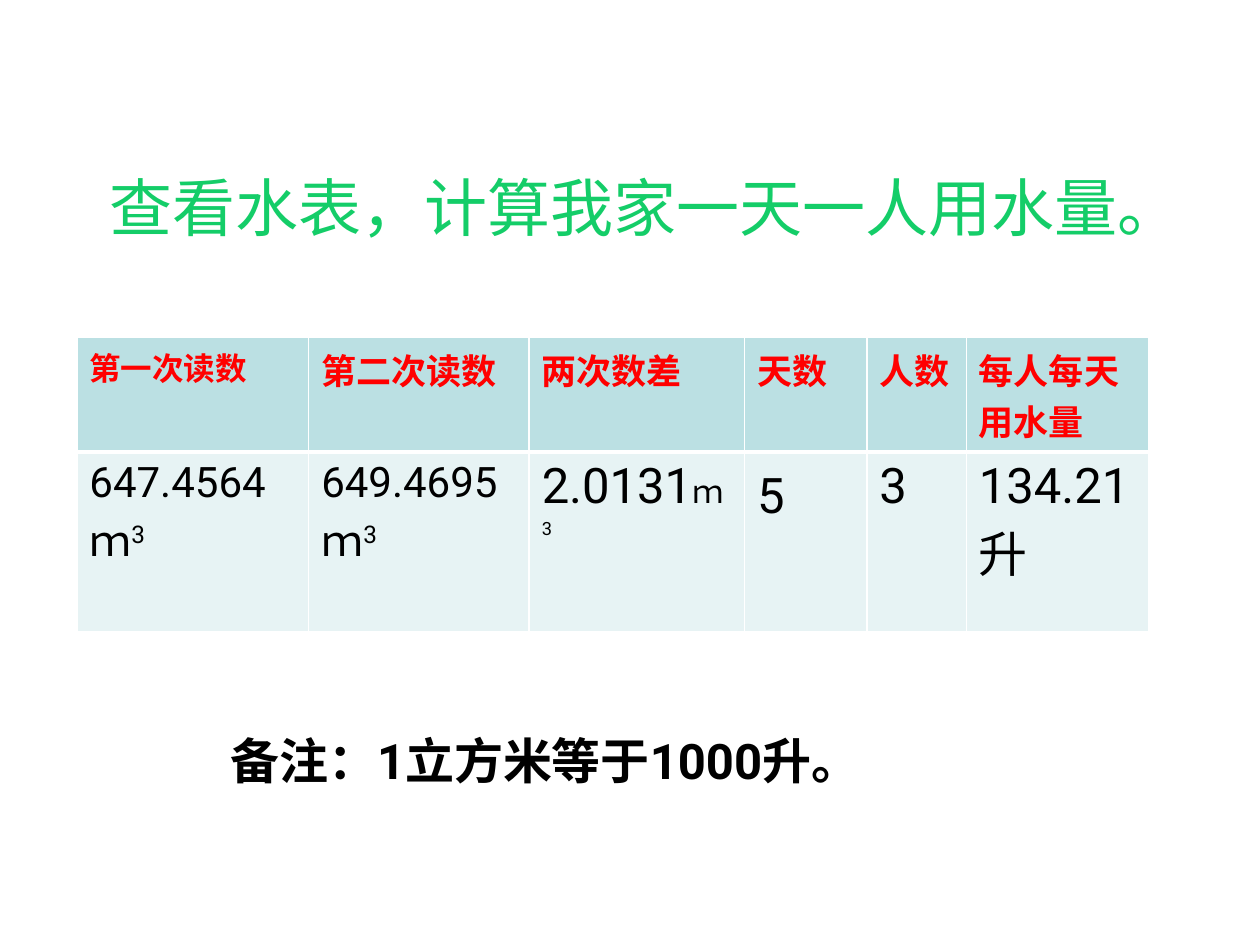
from dataclasses import dataclass

from lxml.etree import SubElement
from pptx import Presentation
from pptx.dml.color import RGBColor
from pptx.enum.text import MSO_ANCHOR as Anchor, MSO_AUTO_SIZE as Fit, PP_ALIGN as Align
from pptx.oxml.ns import qn
from pptx.util import Inches, Pt

HEADS = [("第一次读数", 18), ("第二次读数", 20), ("两次数差", 20),
         ("天数", 20), ("人数", 20), ("每人每天用水量", 20)]
# Each cell is a list of (text, size, raised) runs.
VALUES = [
    [("647.4564ｍ", 24, False), ("3", 24, True)],
    [("649.4695ｍ", 24, False), ("3", 24, True)],
    [("2.0131", 28, False), ("ｍ", 18, False), ("3", 18, True)],
    [("5", 28, False)],
    [("3", 28, False)],
    [("134.21升", 28, False)],
]
WIDTHS = [1.84, 1.75, 1.71, 0.97, 0.79, 1.45]
HEIGHTS = [0.77, 1.43]
DAYS = 3


def color(code):
    return RGBColor.from_string(code)


def border(cell, widths):
    """Draw white edges; widths maps an edge letter to points."""
    props = cell._tc.get_or_add_tcPr()
    for edge, width in widths.items():
        line = SubElement(props, qn(f"a:ln{edge}"), w=str(Pt(width)))
        fill = SubElement(line, qn("a:solidFill"))
        SubElement(fill, qn("a:srgbClr"), val="FFFFFF")


@dataclass
class Page:
    slide: object
    latin: str = "Roboto"
    asian: str = "Noto Sans CJK SC"
    ink: str = "000000"
    accent: str = "FF0000"
    green: str = "14CD68"
    head: str = "BBE0E3"
    body: str = "E7F3F4"

    def style(self, para, tint, bold=False, size=None, face=None):
        font = para.font
        font.name = face or self.latin
        font.bold = bold
        font.color.rgb = color(tint)
        if size:
            font.size = Pt(size)
        SubElement(font._element, qn("a:ea"), typeface=self.asian)

    def title(self, text, box):
        shape = self.slide.shapes.title
        shape.left, shape.top, shape.width, shape.height = map(Inches, box)
        frame = shape.text_frame
        frame.text = text
        frame.vertical_anchor = Anchor.MIDDLE
        para = frame.paragraphs[0]
        para.alignment = Align.CENTER
        self.style(para, self.green, size=36, face=self.asian)

    def table(self, left, top):
        box = map(Inches, (left, top, sum(WIDTHS), sum(HEIGHTS)))
        grid = self.slide.shapes.add_table(len(HEIGHTS), len(WIDTHS), *box).table
        for col, width in zip(grid.columns, WIDTHS):
            col.width = Inches(width)
        for row, height in zip(grid.rows, HEIGHTS):
            row.height = Inches(height)
        for col, (text, size) in enumerate(HEADS):
            para = self.cell(grid.cell(0, col), self.head, 3)
            para.text = text
            self.style(para, self.accent, bold=True, size=size)
        for col, runs in enumerate(VALUES):
            para = self.cell(grid.cell(1, col), self.body, 1)
            self.style(para, self.ink)
            for text, size, raised in runs:
                run = para.add_run()
                run.text = text
                run.font.size = Pt(size)
                if raised:
                    run.font._element.set("baseline", "30000")
        grid.cell(1, DAYS).margin_top = Inches(0.13)

    def cell(self, cell, fill, base):
        """Paint a cell with a lower edge of base points; return its paragraph."""
        top = 3 if base == 1 else 1
        border(cell, {"L": 1, "R": 1, "T": top, "B": base})
        cell.fill.solid()
        cell.fill.fore_color.rgb = color(fill)
        return cell.text_frame.paragraphs[0]

    def note(self, text, box):
        frame = self.slide.shapes.add_textbox(*map(Inches, box)).text_frame
        frame.word_wrap = True
        frame.auto_size = Fit.SHAPE_TO_FIT_TEXT
        para = frame.paragraphs[0]
        para.text = text
        self.style(para, self.ink, bold=True, size=28)


def main():
    deck = Presentation()
    deck.slide_width, deck.slide_height = Inches(10), Inches(7.5)
    slide = deck.slides.add_slide(deck.slide_layouts[0])
    sub = slide.placeholders[1]._element
    sub.getparent().remove(sub)

    page = Page(slide)
    page.title("查看水表，计算我家一天一人用水量。", (0.62, 0.86, 8.5, 1.56))
    page.table(0.61, 2.68)
    page.note("备注：1立方米等于1000升。", (1.73, 5.75, 5.83, 0.57))
    deck.save("out.pptx")


if __name__ == "__main__":
    main()
